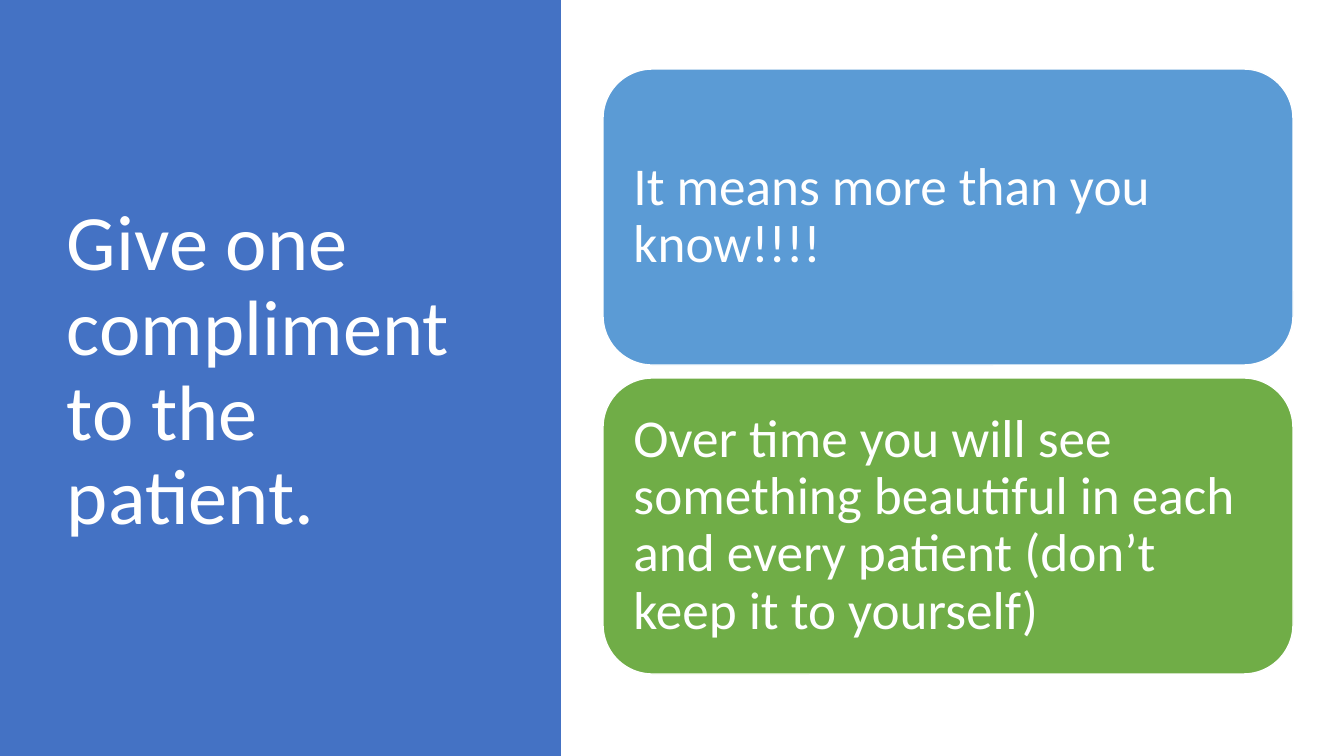
from pptx import Presentation
from pptx.enum.shapes import MSO_SHAPE as Shape
from pptx.enum.text import MSO_ANCHOR as Anchor, MSO_AUTO_SIZE as Auto, PP_ALIGN as Align
from pptx.dml.color import RGBColor as Color
from pptx.util import Emu, Pt

HUES = {"panel": "4472C4", "blue": "5B9BD5", "green": "70AD47", "white": "FFFFFF"}
WIDE, HIGH = 1344, 756
SCALE = 12192000 / WIDE


def px(*sizes):
    return [Emu(round(n * SCALE)) for n in sizes]


def write(shape, text, size, pad):
    frame = shape.text_frame
    frame.text = text
    frame.word_wrap = True
    frame.auto_size = Auto.NONE
    frame.vertical_anchor = Anchor.MIDDLE
    (frame.margin_left, frame.margin_top,
     frame.margin_right, frame.margin_bottom) = px(*pad)
    para = frame.paragraphs[0]
    para.alignment = Align.LEFT
    para.line_spacing = 0.9
    para.font.name = "Calibri"
    para.font.size = Pt(size)
    para.font.color.rgb = Color.from_string(HUES["white"])


deck = Presentation()
deck.slide_width, deck.slide_height = px(WIDE, HIGH)
slide = deck.slides.add_slide(deck.slide_layouts[5])

# Title over the left panel
title = slide.shapes.title
title.left, title.top, title.width, title.height = px(57, 69, 419, 607)
write(title, "Give one compliment to the patient.", 56, (10, 5, 10, 5))

panel = slide.shapes.add_shape(Shape.RECTANGLE, *px(0, 0, 561, HIGH))
panel.shadow.inherit = False
panel.fill.solid()
panel.fill.fore_color.rgb = Color.from_string(HUES["panel"])
panel.line.fill.background()
title.element.addprevious(panel.element)  # behind the title

# Stacked message cards
CARDS = [
    ("blue", "It means more than you know!!!!"),
    ("green", "Over time you will see something beautiful in each and every patient "
              "(don’t keep it to yourself)"),
]
TOP, TALL, GAP = 69, 296, 13
for row, (hue, text) in enumerate(CARDS):
    card = slide.shapes.add_shape(
        Shape.ROUNDED_RECTANGLE, *px(603, TOP + row * (TALL + GAP), 690, TALL))
    card.shadow.inherit = False
    card.fill.solid()
    card.fill.fore_color.rgb = Color.from_string(HUES[hue])
    card.line.color.rgb = Color.from_string(HUES["white"])
    card.line.width = Pt(1)
    write(card, text, 38, (16, 16, 16, 16))

deck.save("out.pptx")
